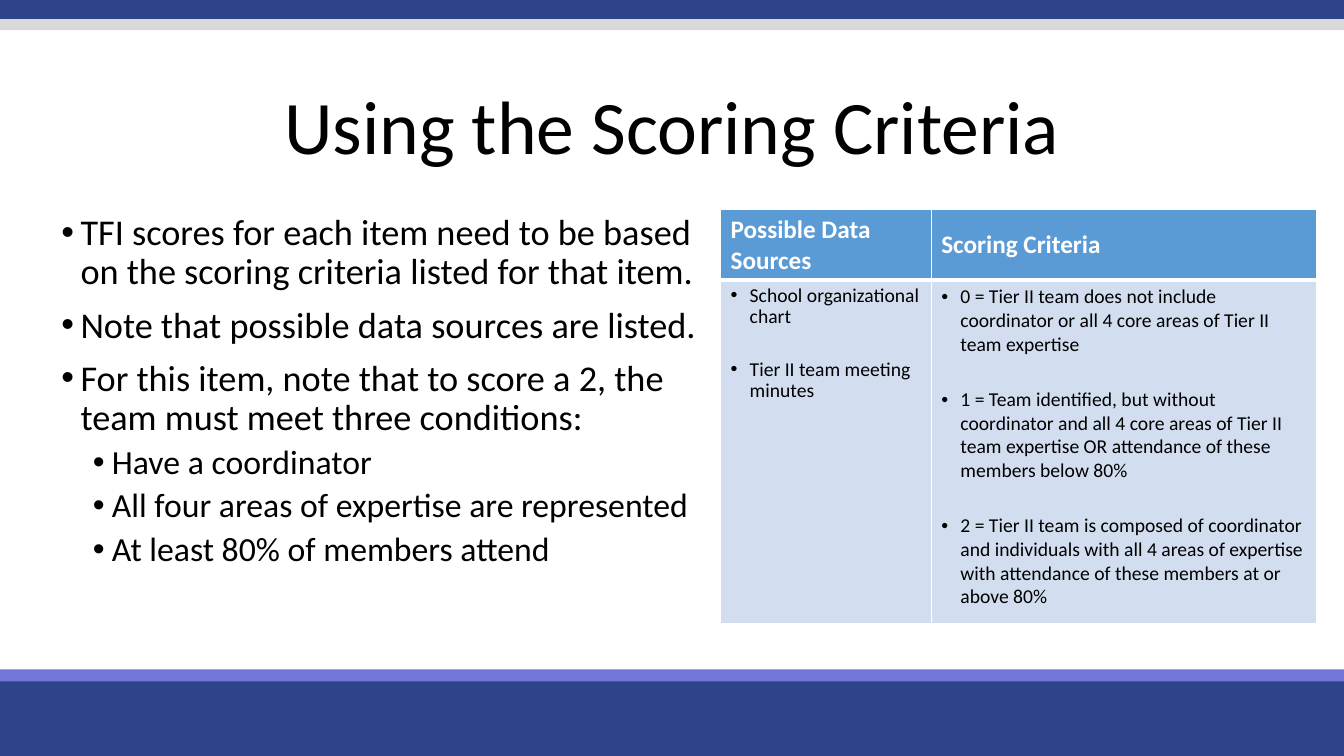
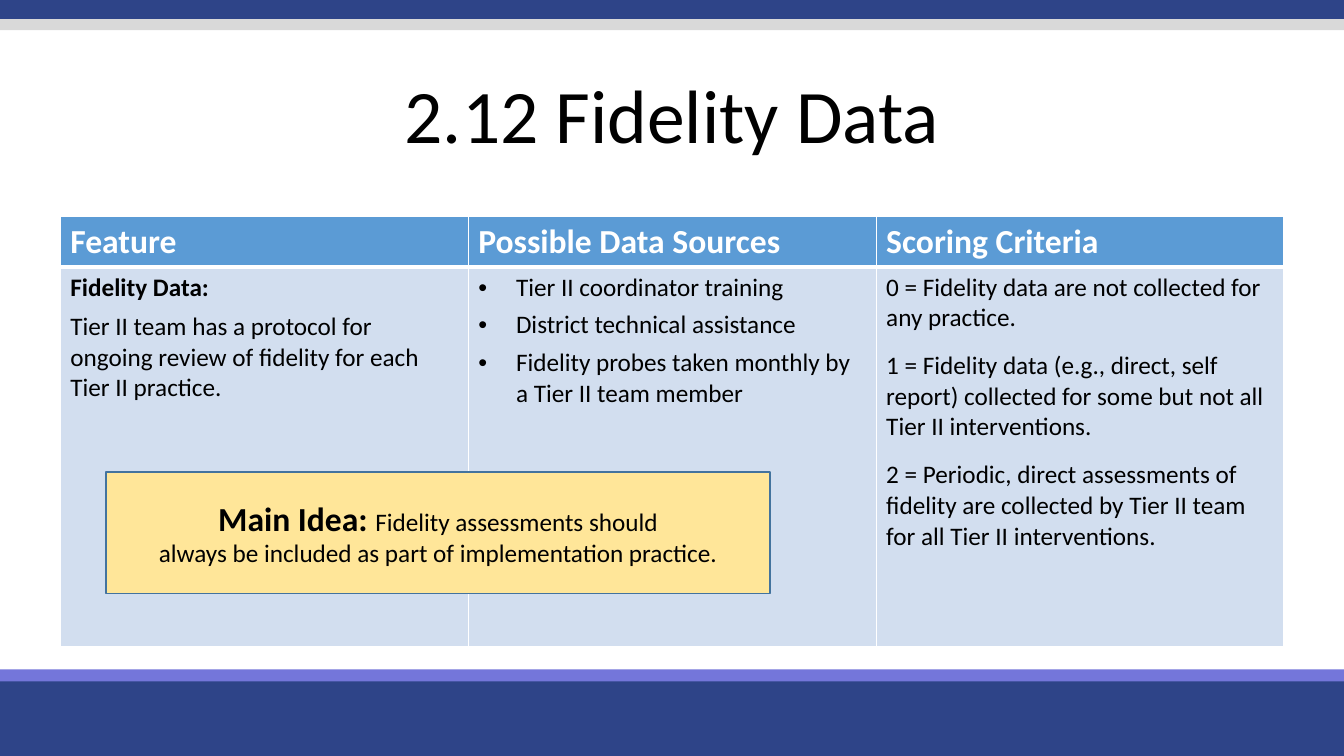
import lxml.etree
import pptx
import pptx.dml.color
import pptx.enum.shapes
import pptx.enum.text
import pptx.oxml.ns
import pptx.util

Cm = pptx.util.Cm
Pt = pptx.util.Pt
PP_ALIGN = pptx.enum.text.PP_ALIGN
MIDDLE = pptx.enum.text.MSO_ANCHOR.MIDDLE
qn = pptx.oxml.ns.qn

# Shared look
FONT = "Calibri"
BLACK, WHITE = "000000", "FFFFFF"
NAVY, GREY, VIOLET = "2E4488", "D9D9D9", "7476DA"
HEADER, CELL = "5B9BD5", "D2DEEF"
NOTE, NOTE_LINE = "FFE699", "43739E"
SLIDE_W, SLIDE_H = 33.87, 19.05
BANDS = [(0, 0.48, NAVY), (0.48, 0.28, GREY), (17.02, 2.03, NAVY), (16.87, 0.3, VIOLET)]


def rgb(value):
    return pptx.dml.color.RGBColor.from_string(value)


def style_run(r, size, color=BLACK, bold=False):
    r.font.name = FONT
    r.font.size = Pt(size)
    r.font.bold = bold
    r.font.color.rgb = rgb(color)


def add_bullet(p, left, hang):
    pPr = p._p.get_or_add_pPr()
    pPr.set("marL", str(Cm(left)))
    pPr.set("indent", str(-Cm(hang)))
    lxml.etree.SubElement(pPr, qn("a:buFont")).set("typeface", "Arial")
    lxml.etree.SubElement(pPr, qn("a:buChar")).set("char", "•")


def write(tf, texts, size, color=BLACK, bold=False, left=0, hang=0,
          line=1.0, before=0, after=0, align=PP_ALIGN.LEFT):
    """Append one paragraph per text, starting in the empty first one."""
    for text in texts:
        first = not tf.text
        p = tf.paragraphs[0] if first else tf.add_paragraph()
        p.text = text
        if hang:
            add_bullet(p, left, hang)
        p.alignment = align
        p.line_spacing = line
        p.space_before = Pt(0 if first else before)
        p.space_after = Pt(after)
        for r in p.runs:
            style_run(r, size, color, bold)


def add_box(s, x, y, w, h, fill, line=None):
    sp = s.shapes.add_shape(pptx.enum.shapes.MSO_SHAPE.RECTANGLE, Cm(x), Cm(y), Cm(w), Cm(h))
    sp.shadow.inherit = False
    sp.fill.solid()
    sp.fill.fore_color.rgb = rgb(fill)
    if line:
        sp.line.color.rgb = rgb(line)
        sp.line.width = Pt(1)
    else:
        sp.line.fill.background()
    return sp


def add_text(s, x, y, w, h):
    tf = s.shapes.add_textbox(Cm(x), Cm(y), Cm(w), Cm(h)).text_frame
    tf.word_wrap = True
    return tf


def add_slide(prs, title, y, h):
    """Blank slide with the bands and a centred title."""
    s = prs.slides.add_slide(prs.slide_layouts[6])
    for top, height, color in BANDS:
        add_box(s, 0, top, SLIDE_W, height, color)
    tf = add_text(s, 0, y, SLIDE_W, h)
    tf.vertical_anchor = MIDDLE
    write(tf, [title], 54, line=0.9, align=PP_ALIGN.CENTER)
    return s


def style_cell(cell, fill, top, bottom):
    """Fill and white borders; the borders come before the fill in the XML."""
    cell.fill.solid()
    cell.fill.fore_color.rgb = rgb(fill)
    tcPr = cell._tc.get_or_add_tcPr()
    sides = [("L", 1), ("R", 1), ("T", top), ("B", bottom)]
    for i, (side, width) in enumerate(sides):
        ln = lxml.etree.Element(qn("a:ln" + side), w=str(Pt(width)))
        solid = lxml.etree.SubElement(ln, qn("a:solidFill"))
        lxml.etree.SubElement(solid, qn("a:srgbClr")).set("val", WHITE)
        tcPr.insert(i, ln)


def add_criteria_table(s, x, y, widths, heights, headings, size):
    """Table with a heading row; returns the text frames of the row below."""
    shape = s.shapes.add_table(2, len(widths), Cm(x), Cm(y), Cm(sum(widths)), Cm(sum(heights)))
    table = shape.table
    table.horz_banding = False
    for row, height in zip(table.rows, heights):
        row.height = Cm(height)
    for i, (width, heading) in enumerate(zip(widths, headings)):
        table.columns[i].width = Cm(width)
        head, body = table.cell(0, i), table.cell(1, i)
        style_cell(head, HEADER, 1, 3)
        style_cell(body, CELL, 3, 1)
        head.vertical_anchor = MIDDLE
        write(head.text_frame, [heading], size, WHITE, True)
    return [table.cell(1, i).text_frame for i in range(len(widths))]


def add_main_idea(s, x, y, w, h):
    sp = add_box(s, x, y, w, h, NOTE, NOTE_LINE)
    tf = sp.text_frame
    tf.word_wrap = True
    tf.vertical_anchor = MIDDLE
    write(tf, ["Main Idea: "], 24, bold=True, align=PP_ALIGN.CENTER)
    r = tf.paragraphs[0].add_run()
    r.text = "Fidelity assessments should"
    style_run(r, 18)
    write(tf, ["always be included as part of implementation practice."], 18,
          align=PP_ALIGN.CENTER)


def scoring_slide(prs):
    s = add_slide(prs, "Using the Scoring Criteria", 1.75, 3.07)

    # Points on the left
    tf = add_text(s, 1.3, 5.28, 17, 10.44)
    write(tf, [
        "TFI scores for each item need to be based on the scoring criteria listed for that item.",
        "Note that possible data sources are listed.",
        "For this item, note that to score a 2, the team must meet three conditions:",
    ], 25.9, left=0.48, hang=0.48, line=0.9, before=10)
    write(tf, [
        "Have a coordinator",
        "All four areas of expertise are represented",
        "At least 80% of members attend",
    ], 24.1, left=1.27, hang=0.48, line=0.9, before=5)

    # Table on the right
    sources, criteria = add_criteria_table(
        s, 18.16, 5.28, [5.31, 9.7], [1.78, 8.66],
        ["Possible Data Sources", "Scoring Criteria"], 18)
    listed = dict(size=14, left=0.48, hang=0.48, before=10, after=12)
    write(sources, ["School organizational chart", "Tier II team meeting minutes"],
          line=0.9, **listed)
    write(criteria, [
        "0 = Tier II team does not include coordinator or all 4 core areas of Tier II "
        "team expertise",
        "1 = Team identified, but without coordinator and all 4 core areas of Tier II "
        "team expertise OR attendance of these members below 80%",
        "2 = Tier II team is composed of coordinator and individuals with all 4 areas of "
        "expertise with attendance of these members at or above 80%",
    ], **listed)
    criteria.paragraphs[-1].space_after = Pt(0)


def fidelity_slide(prs):
    s = add_slide(prs, "2.12 Fidelity Data", 1.19, 3.63)

    # Full-width table
    feature, sources, criteria = add_criteria_table(
        s, 1.52, 5.46, [10.28] * 3, [1.27, 9.55],
        ["Feature", "Possible Data Sources", "Scoring Criteria"], 24)
    write(feature, ["Fidelity Data:"], 18, bold=True, after=6)
    write(feature, ["Tier II team has a protocol for ongoing review of fidelity for each "
                    "Tier II practice."], 18)
    write(sources, [
        "Tier II coordinator training",
        "District technical assistance",
        "Fidelity probes taken monthly by a Tier II team member",
    ], 18, left=0.95, hang=0.95, after=5)
    write(criteria, [
        "0 = Fidelity data are not collected for any practice.",
        "1 = Fidelity data (e.g., direct, self report) collected for some but not all "
        "Tier II interventions.",
        "2 = Periodic, direct assessments of fidelity are collected by Tier II team for "
        "all Tier II interventions.",
    ], 18, after=12)

    # Note over the table
    add_main_idea(s, 2.67, 11.89, 16.74, 3.07)


def main():
    prs = pptx.Presentation()
    prs.slide_width, prs.slide_height = Cm(SLIDE_W), Cm(SLIDE_H)
    scoring_slide(prs)
    fidelity_slide(prs)
    prs.save("out.pptx")


if __name__ == "__main__":
    main()
